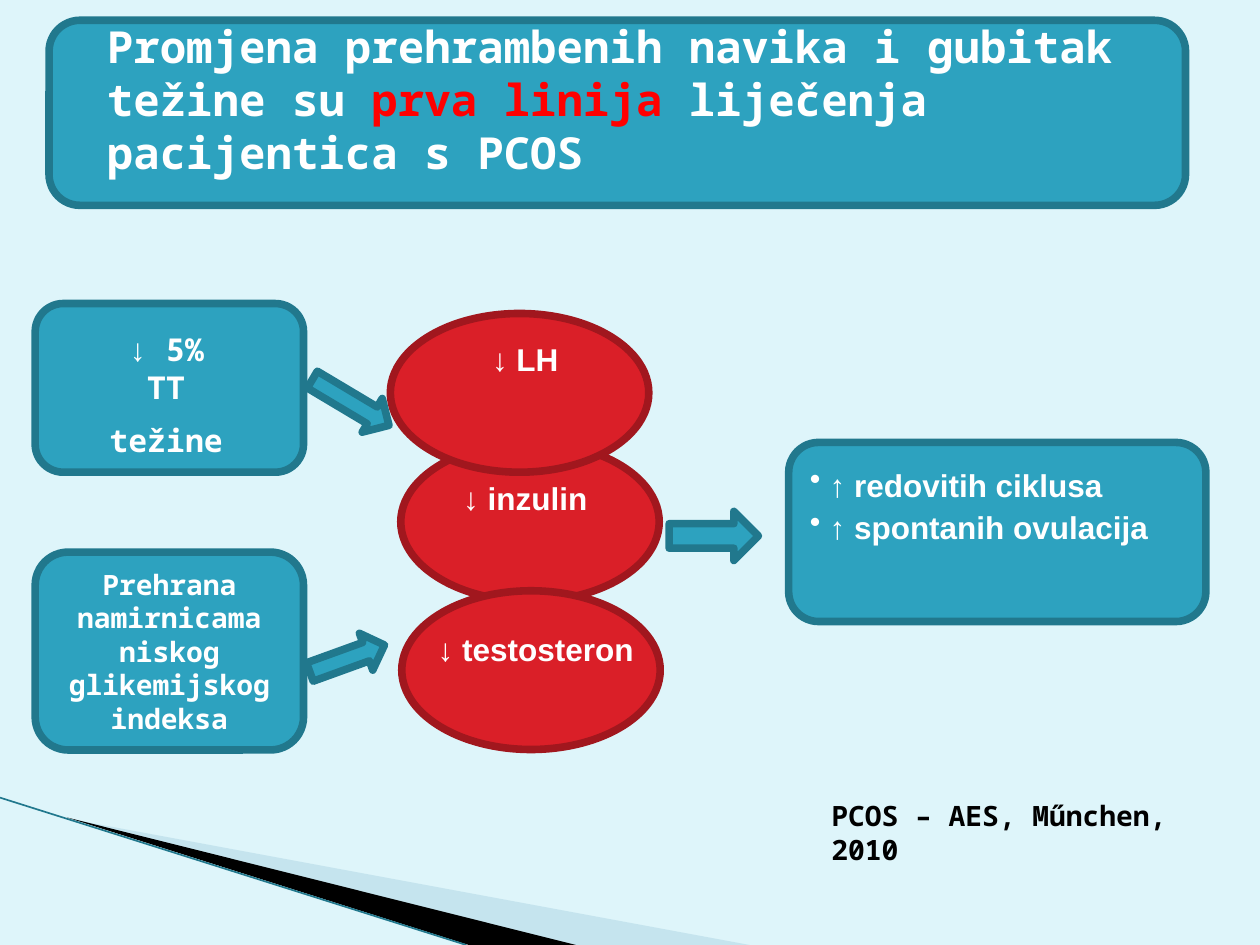
from lxml import etree
from pptx import Presentation, util as u
from pptx.dml.color import RGBColor
from pptx.enum import shapes, text
from pptx.oxml.ns import qn

TEAL, TEAL_EDGE = "2DA2BF", "21788D"
RED, RED_EDGE = "DA1F28", "A1171E"
WHITE, BLACK = "FFFFFF", "000000"
MONO, SANS = "Noto Sans Mono", "Arial"
CENTER, LEFT = text.PP_ALIGN.CENTER, text.PP_ALIGN.LEFT
ROUND = shapes.MSO_SHAPE.ROUNDED_RECTANGLE
OVAL = shapes.MSO_SHAPE.OVAL
ARROW = shapes.MSO_SHAPE.RIGHT_ARROW

# All places are in centimetres: left, top, width, height
TITLE = [
    ("Promjena prehrambenih navika i gubitak težine su ", WHITE),
    ("prva linija ", "FF0000"),
    ("liječenja pacijentica s PCOS", WHITE),
]
TITLE_BOX = (1.9, 0.69, 21.59, 2.62)
BANNER = (0.99, 0.41, 22.91, 3.73)
WEDGES = [  # points, colour, opacity in percent
    ([(1.4, 16.51), (15.11, 19.05), (11.58, 19.05)], "A0CBDC", 40),
    ([(1.35, 16.48), (11.61, 19.05), (9.45, 19.05)], BLACK, 100),
]
WEDGE_EDGE = (0, 16.08, 9.4, 19.05)
EFFECTS = ["↑ redovitih ciklusa", "↑ spontanih ovulacija"]
EFFECTS_BOX = (15.9, 8.92, 8.41, 3.61)
OVAL_SIZE, LABEL_SIZE = (5.21, 3.2), (6.2, 2.16)
HORMONES = [  # label, oval corner, label corner
    ("↓ inzulin", (8.08, 8.92), (7.49, 9.53)),
    ("↓ LH", (7.87, 6.32), (7.49, 6.73)),
    ("↓ testosteron", (8.1, 11.91), (7.7, 12.57)),
]
DIET = "Prehrana namirnicama niskog glikemijskog indeksa"
DIET_BOX = (0.71, 11.13, 5.41, 3.99)
WEIGHT = ["↓ 5% TT", "težine"]
WEIGHT_BOX = (0.71, 6.12, 5.41, 3.4)
WEIGHT_LABEL = (1.9, 6.53, 2.9, 2.18)
SOURCE = "PCOS – AES, Műnchen, 2010"
SOURCE_BOX = (16.51, 15.98, 8.31, 1.63)
ARROWS = [  # place, rotation
    ((6.17, 7.72, 1.8, 0.79), 30.8),
    ((6.2, 12.88, 1.6, 0.79), 340.1),
    ((13.49, 10.31, 1.8, 0.99), 0),
]


def rgb(value):
    return RGBColor.from_string(value)


def cm(values):
    return [u.Cm(value) for value in values]


def set_format(target, **values):
    for name, value in values.items():
        setattr(target, name, value)


def add_bullet(paragraph):
    properties = paragraph._p.get_or_add_pPr()
    properties.set("marL", str(u.Cm(0.4)))
    properties.set("indent", str(-u.Cm(0.4)))
    etree.SubElement(properties, qn("a:buChar"), char="•")


def add_run(paragraph, words, size, font, color):
    run = paragraph.add_run()
    run.text = words
    set_format(run.font, size=u.Pt(size), name=font, bold=True)
    run.font.color.rgb = rgb(color)


def write(shape, lines, size, font, color=WHITE, align=CENTER,
          anchor=text.MSO_ANCHOR.TOP, bullets=False, spacing=1.0):
    frame = shape.text_frame
    set_format(frame, word_wrap=True, vertical_anchor=anchor)
    for index, line in enumerate(lines):
        paragraph = frame.add_paragraph() if index else frame.paragraphs[0]
        set_format(paragraph, alignment=align, line_spacing=spacing)
        if index:
            paragraph.space_before = u.Pt(size / 2)
        if bullets:
            add_bullet(paragraph)
        add_run(paragraph, line, size, font, color)


def add_block(slide, kind, place, fill=TEAL, edge=TEAL_EDGE, rotation=0):
    shape = slide.shapes.add_shape(kind, *cm(place))
    shape.shadow.inherit = False
    shape.rotation = rotation
    shape.fill.solid()
    shape.fill.fore_color.rgb = rgb(fill)
    shape.line.color.rgb = rgb(edge)
    shape.line.width = u.Pt(4.33)
    return shape


def add_wedge(slide, points, color, opacity):
    start, *rest = [cm(point) for point in points]
    builder = slide.shapes.build_freeform(*start)
    builder.add_line_segments(rest)
    shape = builder.convert_to_shape()
    shape.shadow.inherit = False
    shape.line.fill.background()
    shape.fill.solid()
    shape.fill.fore_color.rgb = rgb(color)
    if opacity < 100:
        fill_color = shape._element.spPr.find(".//" + qn("a:srgbClr"))
        etree.SubElement(fill_color, qn("a:alpha"), val=str(opacity * 1000))


def add_background(slide):
    slide.background.fill.solid()
    slide.background.fill.fore_color.rgb = rgb("DEF5FA")
    for wedge in WEDGES:
        add_wedge(slide, *wedge)
    edge = slide.shapes.add_connector(shapes.MSO_CONNECTOR.STRAIGHT, *cm(WEDGE_EDGE))
    edge.line.color.rgb = rgb(TEAL_EDGE)
    edge.line.width = u.Pt(0.95)
    etree.SubElement(edge._element.spPr, qn("a:effectLst"))


def add_title(slide):
    add_block(slide, ROUND, BANNER)
    title = slide.shapes.title
    slide.shapes._spTree.append(title._element)  # in front of the banner
    left, top, width, height = cm(TITLE_BOX)
    set_format(title, left=left, top=top, width=width, height=height)
    set_format(title.text_frame, word_wrap=True, auto_size=text.MSO_AUTO_SIZE.NONE,
               vertical_anchor=text.MSO_ANCHOR.MIDDLE)
    paragraph = title.text_frame.paragraphs[0]
    paragraph.alignment = LEFT
    for words, color in TITLE:
        add_run(paragraph, words, 25.2, MONO, color)


def main():
    presentation = Presentation()
    set_format(presentation, slide_width=u.Cm(25.4), slide_height=u.Cm(19.05))
    slide = presentation.slides.add_slide(presentation.slide_layouts[5])
    middle = text.MSO_ANCHOR.MIDDLE

    add_background(slide)
    effects = add_block(slide, ROUND, EFFECTS_BOX)
    write(effects, EFFECTS, 18, SANS, align=LEFT, anchor=middle, bullets=True, spacing=0.7)
    effects.text_frame.margin_bottom = u.Cm(1)
    add_title(slide)

    for label, oval_corner, label_corner in HORMONES:
        add_block(slide, OVAL, oval_corner + OVAL_SIZE, RED, RED_EDGE)
        box = slide.shapes.add_textbox(*cm(label_corner + LABEL_SIZE))
        write(box, [label], 18, SANS)

    write(slide.shapes.add_textbox(*cm(SOURCE_BOX)), [SOURCE], 16, MONO, BLACK, LEFT)
    write(add_block(slide, ROUND, DIET_BOX), [DIET], 16, MONO, anchor=middle)
    add_block(slide, ROUND, WEIGHT_BOX)
    write(slide.shapes.add_textbox(*cm(WEIGHT_LABEL)), WEIGHT, 18, MONO)
    for place, rotation in ARROWS:
        add_block(slide, ARROW, place, rotation=rotation)

    presentation.save("out.pptx")


if __name__ == "__main__":
    main()
